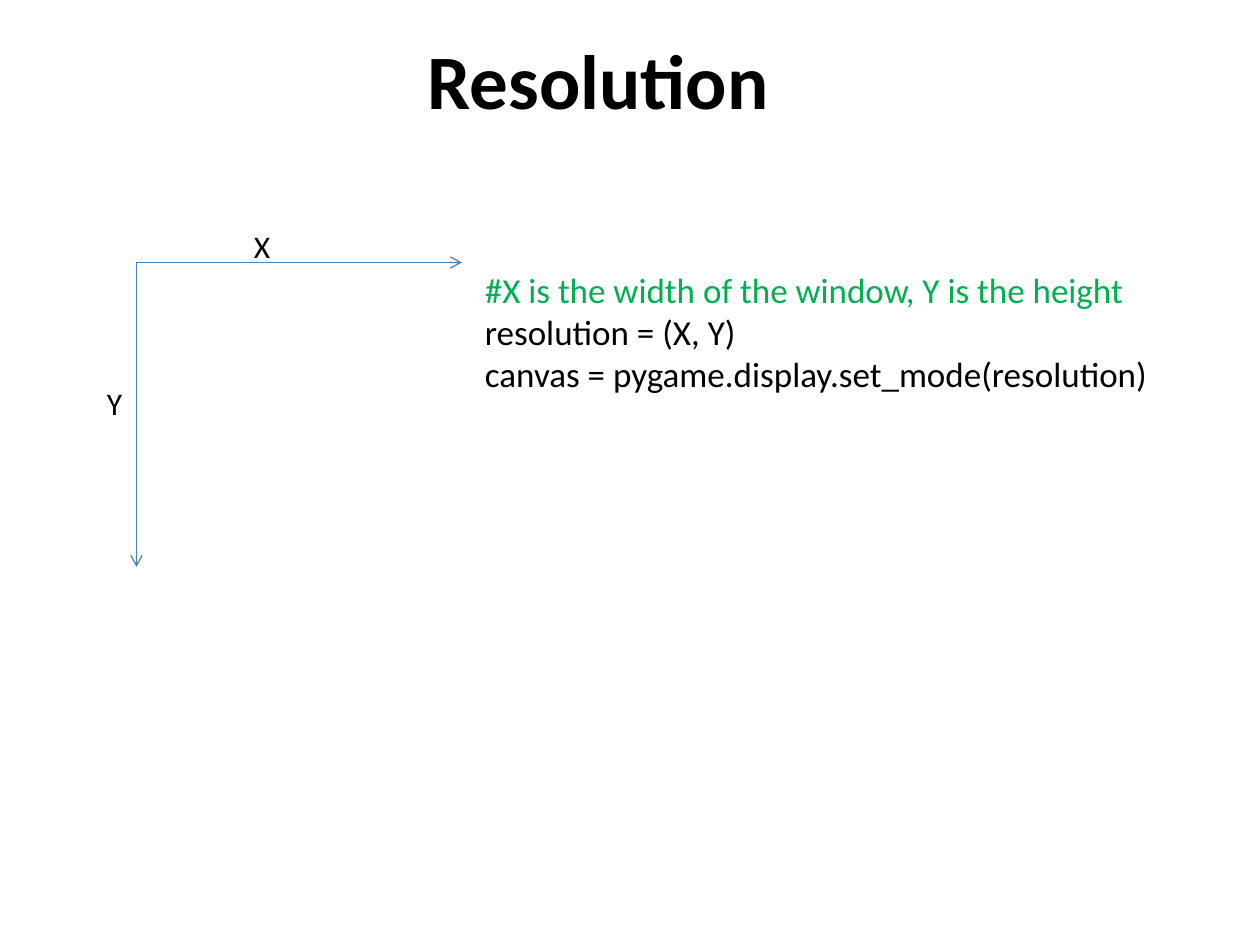
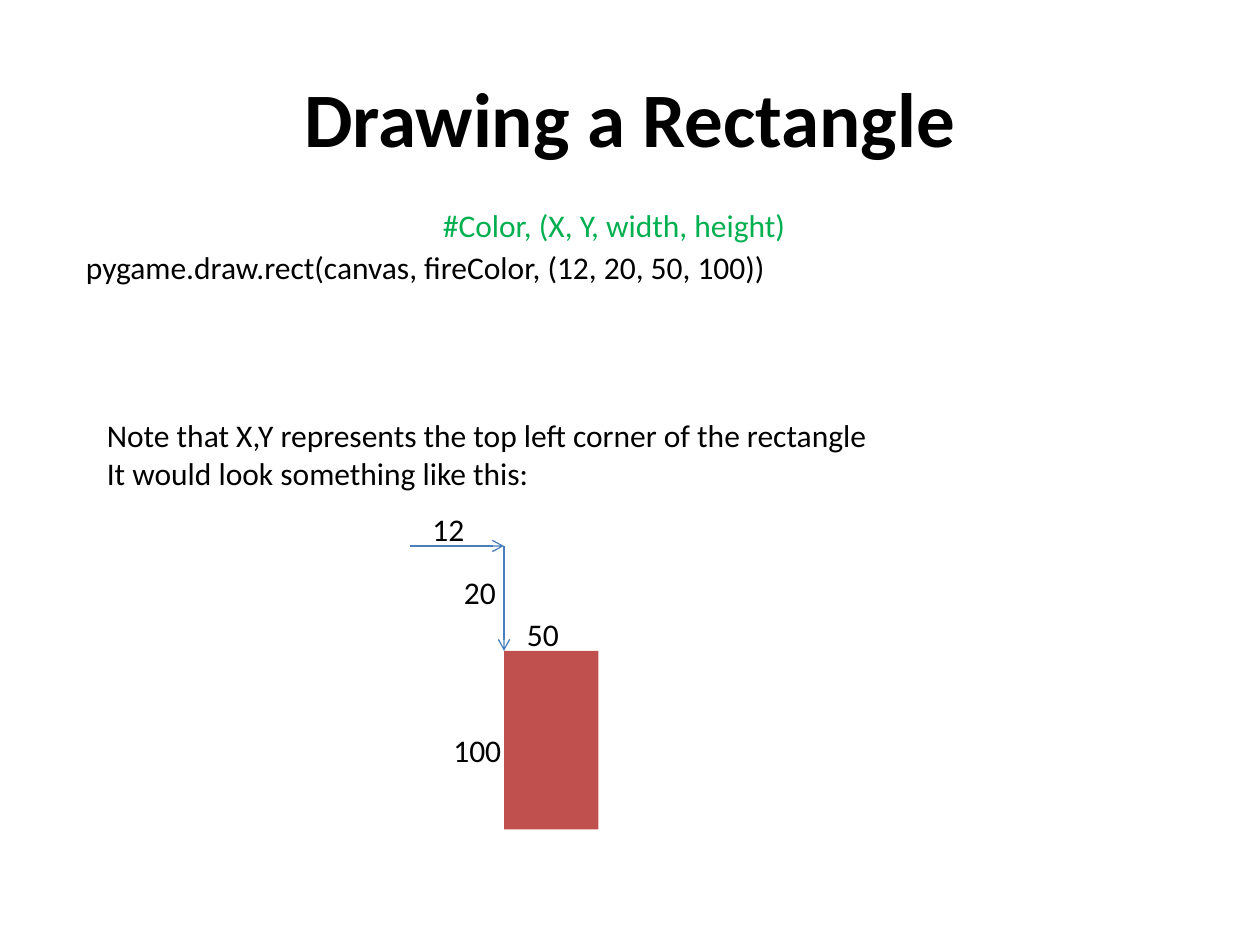
import pptx
import pptx.util
import pptx.dml.color
import pptx.enum.shapes
import pptx.enum.text
import pptx.oxml
import pptx.oxml.ns

Pt = pptx.util.Pt


def rgb(value):
    return pptx.dml.color.RGBColor.from_string(value)


class Deck:
    """Shared style and the current slide; all lengths are in points."""
    FONT = "Calibri"
    INK = "000000"
    COMMENT = "00B050"
    ARROW = "4B7EBC"
    FIRE = "C0504D"

    def __init__(self):
        self.prs = pptx.Presentation()
        self.prs.slide_width, self.prs.slide_height = Pt(720), Pt(540)
        self.slide = None

    def new_slide(self, title, left, top):
        self.slide = self.prs.slides.add_slide(self.prs.slide_layouts[6])
        tf = self.text(left, top, 648, 90, [(title, self.INK)], size=44)
        tf.vertical_anchor = pptx.enum.text.MSO_ANCHOR.MIDDLE
        p = tf.paragraphs[0]
        p.alignment = pptx.enum.text.PP_ALIGN.CENTER
        p.font.bold = True

    def text(self, left, top, width, height, lines, size=18):
        sp = self.slide.shapes.add_textbox(Pt(left), Pt(top), Pt(width), Pt(height))
        tf = sp.text_frame
        tf.word_wrap = True
        for i, (line, color) in enumerate(lines):
            p = tf.add_paragraph() if i else tf.paragraphs[0]
            p.text = line
            p.font.name, p.font.size = self.FONT, Pt(size)
            p.font.color.rgb = rgb(color)
        return tf

    def label(self, left, top, width, text):
        self.text(left, top, width, 29, [(text, self.INK)])

    def arrow(self, x1, y1, x2, y2):
        line = self.slide.shapes.add_connector(
            pptx.enum.shapes.MSO_CONNECTOR.STRAIGHT, Pt(x1), Pt(y1), Pt(x2), Pt(y2))
        line.line.color.rgb = rgb(self.ARROW)
        line.line.width = Pt(0.75)
        ns = pptx.oxml.ns.nsdecls("a")
        line.line._get_or_add_ln().append(
            pptx.oxml.parse_xml(f'<a:tailEnd {ns} type="arrow"/>'))
        line._element.spPr.append(pptx.oxml.parse_xml(f"<a:effectLst {ns}/>"))

    def rect(self, left, top, width, height, color):
        sp = self.slide.shapes.add_shape(
            pptx.enum.shapes.MSO_SHAPE.RECTANGLE, Pt(left), Pt(top), Pt(width), Pt(height))
        sp.shadow.inherit = False
        sp.fill.solid()
        sp.fill.fore_color.rgb = rgb(color)
        sp.line.fill.background()


def resolution_slide(deck):
    deck.new_slide("Resolution", 18, 0)

    # Window axes from the top left corner
    x, y = 78, 150
    deck.arrow(x, y, x, y + 174)
    deck.arrow(x, y, x + 186, y)
    deck.label(138, 126, 78, "X")
    deck.label(54, 216, 78, "Y")

    # Code
    deck.text(270, 150, 438, 80, [
        ("#X is the width of the window, Y is the height", deck.COMMENT),
        ("resolution = (X, Y)", deck.INK),
        ("canvas = pygame.display.set_mode(resolution)", deck.INK),
    ], size=20)


def rectangle_slide(deck):
    deck.new_slide("Drawing a Rectangle", 36, 21.6)

    # Code and note
    deck.label(42, 138, 630, "pygame.draw.rect(canvas, fireColor, (12, 20, 50, 100))")
    deck.text(246, 114, 360, 29, [("#Color, (X, Y, width, height)", deck.COMMENT)])
    deck.text(54, 234, 504, 51, [
        ("Note that X,Y represents the top left corner of the rectangle", deck.INK),
        ("It would look something like this:", deck.INK),
    ])

    # Rectangle with its offsets from the window corner
    x, y = 288, 372
    dx, dy = 54, 60
    deck.rect(x, y, 54, 102, deck.FIRE)
    deck.arrow(x - dx, y - dy, x, y - dy)
    deck.arrow(x, y - dy, x, y)
    for left, top, width, text in [
        (258, 324, 42, "20"),
        (240, 288, 54, "12"),
        (294, 348, 42, "50"),
        (252, 414, 42, "100"),
    ]:
        deck.label(left, top, width, text)


def main():
    deck = Deck()
    resolution_slide(deck)
    rectangle_slide(deck)
    deck.prs.save("out.pptx")


if __name__ == "__main__":
    main()
